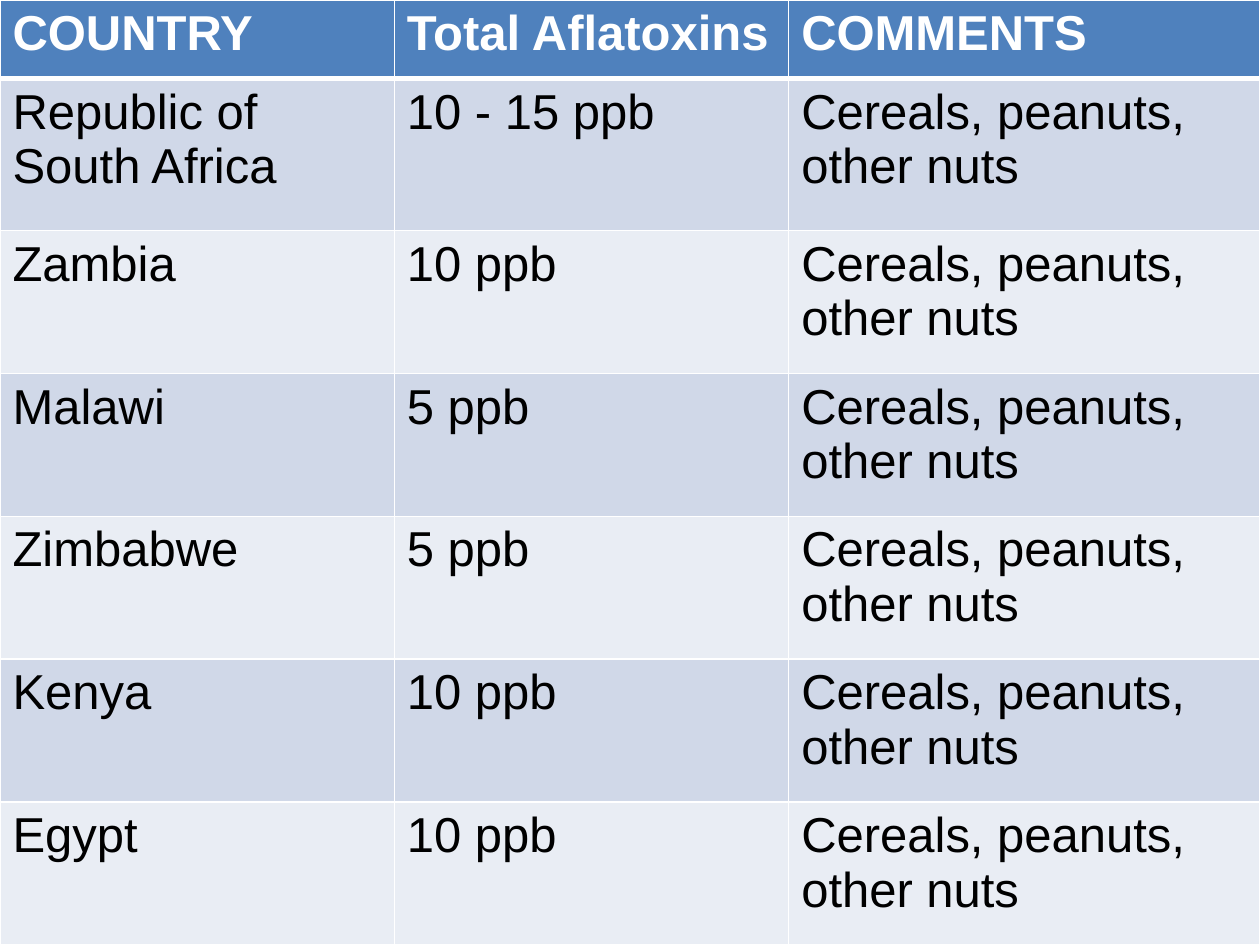
import pptx
import pptx.dml.color
import pptx.oxml.ns
import pptx.util
from lxml import etree

WHITE = pptx.dml.color.RGBColor(0xFF, 0xFF, 0xFF)
BLACK = pptx.dml.color.RGBColor(0x00, 0x00, 0x00)
HEADER_BLUE = pptx.dml.color.RGBColor(0x4F, 0x81, 0xBD)
BAND_DARK = pptx.dml.color.RGBColor(0xD0, 0xD8, 0xE8)
BAND_LIGHT = pptx.dml.color.RGBColor(0xE9, 0xED, 0xF4)

HEADINGS = ("COUNTRY", "Total Aflatoxins", "COMMENTS")
FOODS = "Cereals, peanuts, other nuts"
LIMITS = (
    ("Republic of South Africa", "10 - 15 ppb"),
    ("Zambia", "10 ppb"),
    ("Malawi", "5 ppb"),
    ("Zimbabwe", "5 ppb"),
    ("Kenya", "10 ppb"),
    ("Egypt", "10 ppb"),
)
COLUMN_SHARES = (0.313, 0.313, 0.374)
HEADER_SHARE, FIRST_SHARE = 0.083, 0.161


def add_border(cell, side, points):
    qn = pptx.oxml.ns.qn
    line = etree.SubElement(cell._tc.get_or_add_tcPr(), qn(f"a:ln{side}"),
                            w=str(pptx.util.Pt(points)))
    fill = etree.SubElement(line, qn("a:solidFill"))
    etree.SubElement(fill, qn("a:srgbClr"), val=str(WHITE))


def format_cell(cell, text, row):
    header = row == 0
    for side in "LRTB":
        under_header = (row, side) in ((0, "B"), (1, "T"))
        add_border(cell, side, 3 if under_header else 1)
    cell.fill.solid()
    cell.fill.fore_color.rgb = (
        HEADER_BLUE if header else BAND_DARK if row % 2 else BAND_LIGHT)
    cell.text = text
    font = cell.text_frame.paragraphs[0].font
    font.name = "Arial"
    font.size = pptx.util.Pt(28)
    font.bold = header
    font.color.rgb = WHITE if header else BLACK


def add_limits_table(slide, left, top, width, height):
    records = [HEADINGS] + [(*limit, FOODS) for limit in LIMITS]
    limits = slide.shapes.add_table(
        len(records), len(HEADINGS), left, top, width, height).table
    for column, share in zip(limits.columns, COLUMN_SHARES):
        column.width = int(width * share)
    other_share = (1 - HEADER_SHARE - FIRST_SHARE) / (len(LIMITS) - 1)
    row_shares = [HEADER_SHARE, FIRST_SHARE] + [other_share] * (len(LIMITS) - 1)
    for row, (record, share) in enumerate(zip(records, row_shares)):
        limits.rows[row].height = int(height * share)
        for column, text in enumerate(record):
            format_cell(limits.cell(row, column), text, row)


def main():
    deck = pptx.Presentation()
    deck.slide_width = pptx.util.Inches(10)
    deck.slide_height = pptx.util.Inches(7.5)
    slide = deck.slides.add_slide(deck.slide_layouts[6])
    add_limits_table(slide, 0, 0, deck.slide_width, deck.slide_height)
    deck.save("out.pptx")


if __name__ == "__main__":
    main()
